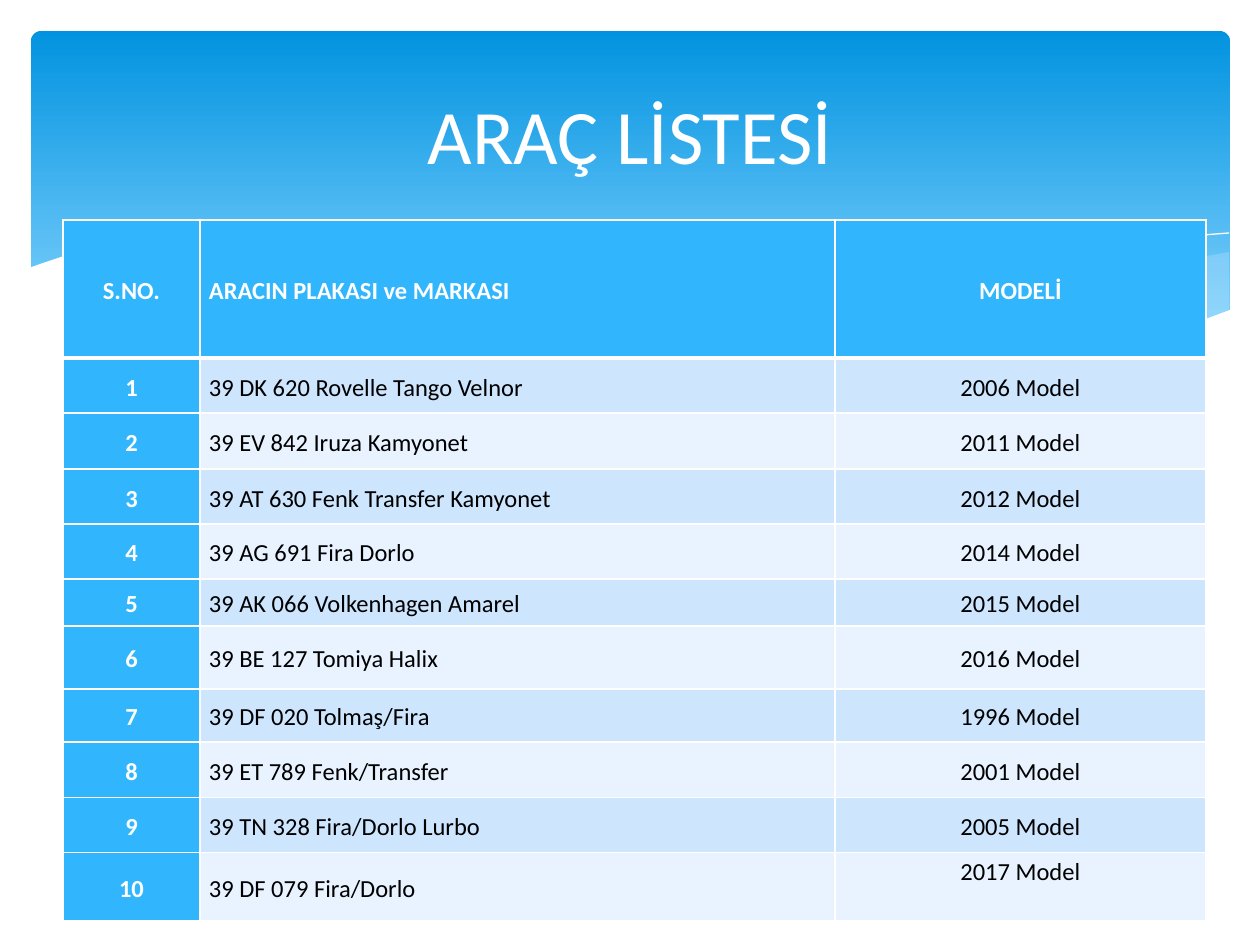
import pptx
import pptx.util
import pptx.dml.color
import pptx.enum.shapes
import pptx.enum.text
import pptx.oxml
import pptx.oxml.ns

# Content
TITLE = "ARAÇ LİSTESİ"
HEAD = ("S.NO.", "ARACIN PLAKASI ve MARKASI", "MODELİ")
CARS = [
    ("39 DK 620 Rovelle Tango Velnor", 2006),
    ("39 EV 842 Iruza Kamyonet", 2011),
    ("39 AT 630 Fenk Transfer Kamyonet", 2012),
    ("39 AG 691 Fira Dorlo", 2014),
    ("39 AK 066 Volkenhagen Amarel", 2015),
    ("39 BE 127 Tomiya Halix", 2016),
    ("39 DF 020 Tolmaş/Fira", 1996),
    ("39 ET 789 Fenk/Transfer", 2001),
    ("39 TN 328 Fira/Dorlo Lurbo", 2005),
    ("39 DF 079 Fira/Dorlo", 2017),
]
COLS = (137, 635, 371)
ROWS = (138, 55, 56, 55, 55, 47, 63, 53, 56, 55, 68)

# Wave curves: each is smoothed through its points
RIGHT = [
    [(1229, 252), (1159, 265), (1085, 281), (982, 305), (889, 324), (833, 334)],
    [(833, 334), (906, 343), (984, 349), (1052, 349), (1121, 343),
     (1178, 331), (1229, 311)],
]
MIDDLE = [
    [(1125, 344), (1017, 328), (889, 302), (793, 280), (736, 266),
     (665, 252), (586, 241), (503, 234), (433, 233), (360, 241)],
    [(360, 241), (456, 256), (566, 280), (668, 302), (757, 321),
     (838, 335), (910, 345), (989, 350), (1068, 349), (1125, 344)],
]
LONG = [[(389, 246), (433, 239), (488, 236), (567, 236), (668, 242),
         (766, 257), (876, 276), (958, 294), (1047, 316), (1143, 343)]]
SHORT = [[(772, 324), (876, 296), (978, 272), (1091, 251), (1164, 239),
          (1229, 233)]]
FRONT = [
    [(1230, 310), (1172, 330), (1103, 344), (1021, 349), (937, 344),
     (841, 334), (730, 315), (634, 294), (527, 268), (428, 248),
     (341, 237), (243, 232), (166, 234), (107, 243), (58, 258), (29, 268)],
    [(29, 414), (1230, 414)],
]

WHITE, BLACK, BLUE, PALE = "FFFFFF", "000000", "31B6FD", "C6E7FC"
BANDS = ("CEE5FE", "E8F3FF")
FONT = "Calibri"
ALIGN = pptx.enum.text.PP_ALIGN
ANCHOR = pptx.enum.text.MSO_ANCHOR


def px(n):
    return pptx.util.Emu(round(n * 914400 / 126))


def rgb(code):
    return pptx.dml.color.RGBColor.from_string(code)


def add_xml(parent, body):
    parent.append(pptx.oxml.parse_xml(
        body.replace(" ", f" {pptx.oxml.ns.nsdecls('a')} ", 1)))


def smooth(pts, steps=4):
    """Catmull-Rom points through pts."""
    out = [pts[0]]
    ends = [pts[0], *pts, pts[-1]]
    for a, b, c, d in zip(ends, ends[1:], ends[2:], ends[3:]):
        for i in range(1, steps + 1):
            t = i / steps
            out.append(tuple(
                (2 * q + (r - p) * t + (2 * p - 5 * q + 4 * r - s) * t ** 2
                 + (3 * q - p - 3 * r + s) * t ** 3) / 2
                for p, q, r, s in zip(a, b, c, d)))
    return out


def add_wave(slide, curves, fill=None, alpha=100):
    pts = [(px(x), px(y)) for curve in curves for x, y in smooth(curve)]
    build = slide.shapes.build_freeform(*pts[0], scale=1.0)
    build.add_line_segments(pts[1:], close=fill is not None)
    wave = build.convert_to_shape()
    wave.shadow.inherit = False
    if fill:
        wave.fill.solid()
        wave.fill.fore_color.rgb = rgb(fill)
        wave.line.fill.background()
        if alpha < 100:
            color = wave.fill._xPr.solidFill[0]
            add_xml(color, f'<a:alpha val="{alpha * 1000}"/>')
    else:
        wave.fill.background()
        wave.line.color.rgb = rgb(WHITE)
        wave.line.width = 0


def add_run(para, text, size, color, bold=False):
    run = para.add_run()
    run.text = text
    run.font.name, run.font.size = FONT, pptx.util.Pt(size)
    run.font.bold, run.font.color.rgb = bold, rgb(color)


def set_cell(cell, text, fill, color, bold, align, edges):
    props = cell._tc.get_or_add_tcPr()
    for side, width in edges.items():
        add_xml(props, f'<a:ln{side} w="{width * 12700}"><a:solidFill>'
                       f'<a:srgbClr val="{WHITE}"/></a:solidFill></a:ln{side}>')
    cell.fill.solid()
    cell.fill.fore_color.rgb = rgb(fill)
    cell.margin_left = cell.margin_right = px(9)
    cell.margin_top = cell.margin_bottom = 0
    cell.vertical_anchor = ANCHOR.MIDDLE
    para = cell.text_frame.paragraphs[0]
    para.alignment, para.line_spacing = align, 1.15
    add_run(para, text, 14, color, bold)


def add_cars(slide):
    frame = slide.shapes.add_table(len(ROWS), len(COLS), px(63), px(220),
                                   px(sum(COLS)), px(sum(ROWS)))
    table = frame.table
    table.first_row = table.horz_banding = False
    for col, width in zip(table.columns, COLS):
        col.width = px(width)
    for row, height in zip(table.rows, ROWS):
        row.height = px(height)
    lines = [HEAD] + [(str(n), car, f"{year} Model")
                      for n, (car, year) in enumerate(CARS, 1)]
    for r, line in enumerate(lines):
        edges = {"L": 1, "R": 1, "T": 3 if r == 1 else 1, "B": 1 if r else 3}
        for c, text in enumerate(line):
            key = r == 0 or c == 0
            set_cell(table.cell(r, c), text,
                     BLUE if key else BANDS[(r - 1) % 2],
                     WHITE if key else BLACK, key,
                     ALIGN.LEFT if c == 1 else ALIGN.CENTER, edges)
    table.cell(len(CARS), 2).vertical_anchor = ANCHOR.TOP


def main():
    deck = pptx.Presentation()
    deck.slide_width, deck.slide_height = px(1260), px(945)
    slide = deck.slides.add_slide(deck.slide_layouts[5])

    # Blue banner
    banner = slide.shapes.add_shape(
        pptx.enum.shapes.MSO_SHAPE.ROUNDED_RECTANGLE,
        px(31), px(31), px(1199), px(340))
    banner.adjustments[0] = 0.03
    banner.shadow.inherit = False
    banner.line.fill.background()
    banner.fill.gradient()
    banner.fill.gradient_angle = 270
    stops = zip(banner.fill.gradient_stops, (0, 0.9), ("0293E0", "83D3FE"))
    for stop, place, color in stops:
        stop.position, stop.color.rgb = place, rgb(color)

    # Waves
    add_wave(slide, RIGHT, PALE, 29)
    add_wave(slide, MIDDLE, PALE, 40)
    add_wave(slide, LONG)
    add_wave(slide, SHORT)
    add_wave(slide, FRONT, WHITE)

    # Car table
    add_cars(slide)

    # Title, brought to the front
    title = slide.shapes.title
    title.left, title.top, title.width, title.height = map(
        px, (63, 47, 1134, 173))
    title.text_frame.vertical_anchor = ANCHOR.MIDDLE
    para = title.text_frame.paragraphs[0]
    para.alignment = ALIGN.CENTER
    add_run(para, TITLE, 44, WHITE)
    slide.shapes._spTree.append(title._element)

    deck.save("out.pptx")


if __name__ == "__main__":
    main()
